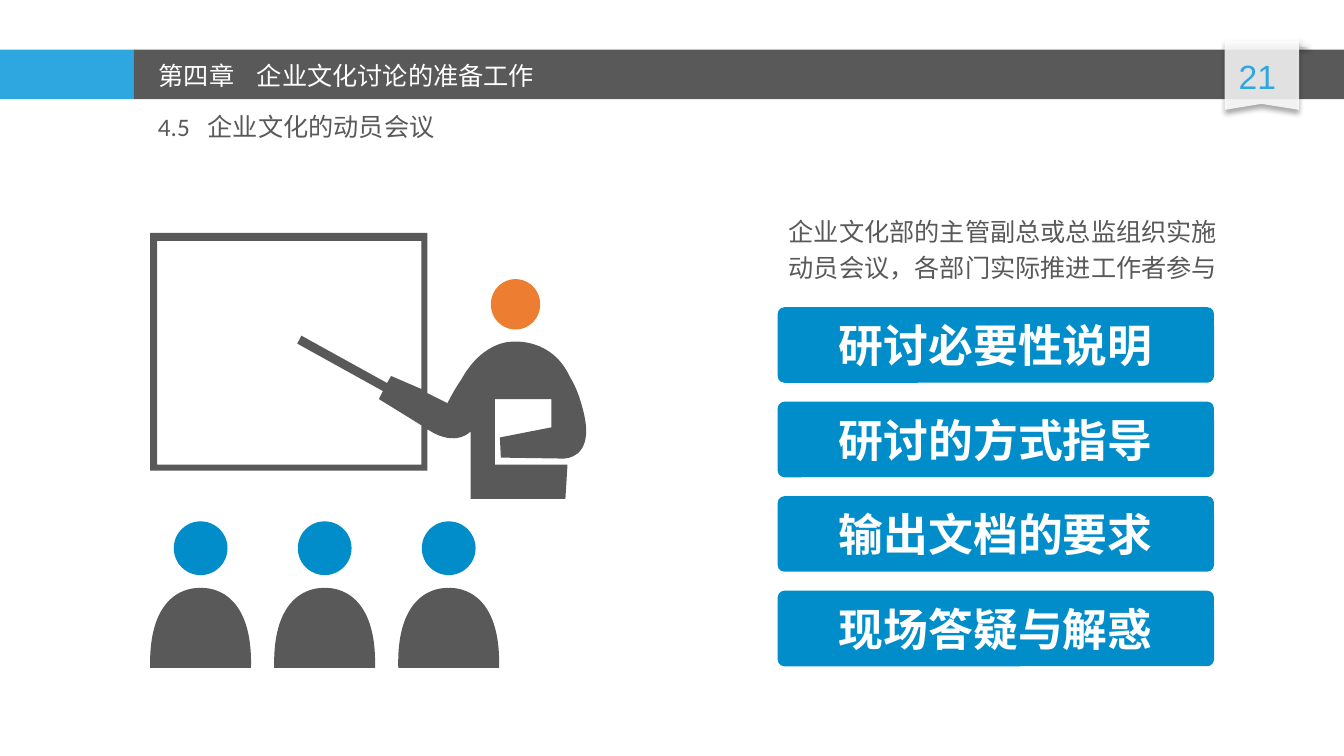
from typing import NamedTuple

from lxml.etree import SubElement
from pptx import Presentation
from pptx.dml.color import RGBColor
from pptx.enum.shapes import MSO_SHAPE
from pptx.enum.text import MSO_ANCHOR, PP_ALIGN
from pptx.oxml.ns import qn
from pptx.util import Pt

COLORS = {"sky": "2EA7E0", "blue": "008DCA", "gray": "595959", "pale": "F8F8F8",
          "white": "FFFFFF", "orange": "ED7D31", "black": "000000"}
CJK = "Noto Sans CJK SC"


class Box(NamedTuple):
    x: float
    y: float
    w: float
    h: float


class Plain(NamedTuple):
    kind: MSO_SHAPE
    box: Box
    color: str


Path = list[tuple[float, ...]]  # pairs are corners, sixes are Bezier curves

prs = Presentation()
prs.slide_width, prs.slide_height = Pt(960), Pt(540)
shapes = prs.slides.add_slide(prs.slide_layouts[6]).shapes


def paint(shape, color: str):
    shape.shadow.inherit = False
    shape.fill.solid()
    shape.fill.fore_color.rgb = RGBColor.from_string(COLORS[color])
    shape.line.fill.background()
    return shape


def draw(item: Plain):
    return paint(shapes.add_shape(item.kind, *map(Pt, item.box)), item.color)


def bend(form, parts: Path) -> None:
    """Turn the straight segments into curves where a part has six numbers."""
    steps = [step for step in form._element.iter(qn("a:moveTo"), qn("a:lnTo"))]
    for step, part in zip(steps, parts):
        if len(part) == 6:
            step.tag = qn("a:cubicBezTo")
            step.remove(step[0])
            for x, y in zip(part[::2], part[1::2]):
                SubElement(step, qn("a:pt"), x=str(Pt(x) - form.left),
                           y=str(Pt(y) - form.top))


def outline(color: str, *paths: Path):
    build = None
    for path in paths:
        start, *ends = [(Pt(part[-2]), Pt(part[-1])) for part in path]
        if build is None:
            build = shapes.build_freeform(*start, scale=1.0)
        else:
            build.move_to(*start)
        build.add_line_segments(ends, close=False)
    form = build.convert_to_shape()
    bend(form, [part for path in paths for part in path])
    return paint(form, color)


def glass(shape) -> None:
    """Make the fill 85% opaque and cast a soft shadow."""
    props = shape._element.spPr
    tint = props.find(qn("a:solidFill"))[0]
    SubElement(tint, qn("a:alpha"), val="85000")
    cast = SubElement(props.find(qn("a:effectLst")), qn("a:outerShdw"),
                      blurRad=str(Pt(4)), dist=str(Pt(3)), dir="5400000")
    tone = SubElement(cast, qn("a:srgbClr"), val=COLORS["black"])
    SubElement(tone, qn("a:alpha"), val="40000")


def write(shape, text: str, *, size: float = 18, font: str = CJK, color: str = "gray",
          bold: bool = False, align: PP_ALIGN = PP_ALIGN.LEFT,
          anchor: MSO_ANCHOR = MSO_ANCHOR.TOP, lead: float = 0,
          tab: float = 0, side: float = 7.2) -> None:
    frame = shape.text_frame
    frame.word_wrap = True
    frame.vertical_anchor = anchor
    frame.margin_left = frame.margin_right = Pt(side)
    para = frame.paragraphs[0]
    para.alignment = align
    if tab:
        stops = SubElement(para._p.get_or_add_pPr(), qn("a:tabLst"))
        SubElement(stops, qn("a:tab"), pos=str(Pt(tab)), algn="l")
    if lead:
        para.line_spacing = Pt(lead)
    run = para.add_run()
    run.text = text
    run.font.name, run.font.size, run.font.bold = font, Pt(size), bold
    run.font.color.rgb = RGBColor.from_string(COLORS[color])
    SubElement(run._r.get_or_add_rPr(), qn("a:ea"), typeface=CJK)


def label(box: Box, text: str, **style) -> None:
    write(shapes.add_textbox(*map(Pt, box)), text, **style)


# Header bars and page ribbon
draw(Plain(MSO_SHAPE.RECTANGLE, Box(0, 35.4, 95.6, 35.4), "sky"))
draw(Plain(MSO_SHAPE.RECTANGLE, Box(95.6, 35.4, 864.4, 35.4), "gray"))
glass(draw(Plain(MSO_SHAPE.RIGHT_TRIANGLE, Box(928.1, 27.4, 8.6, 5.8), "pale")))
glass(outline("white", [(874.8, 28.8), (928, 28.8), (928, 78.5),
                        (901, 74.2), (874.8, 78.5), (874.8, 28.8)]))
label(Box(871.5, 36.6, 53.3, 36), "21", size=24, font="Arial", color="sky",
      align=PP_ALIGN.CENTER)

# Headings
label(Box(106.3, 39.6, 363, 28.8), "第四章\t企业文化讨论的准备工作", color="white",
      lead=21.6, tab=70.2)
label(Box(105.8, 76.3, 382, 28.8), "4.5\t企业文化的动员会议", font="Calibri",
      lead=21.6, tab=35.5)

# Audience
for i in range(3):
    mid = 143.3 + 88.6 * i
    outline("gray", [(mid + 36, 477), (mid + 37.6, 416, mid, 420, mid, 420),
                     (mid, 420, mid - 37.6, 416, mid - 36, 477), (mid + 36, 477)])
    draw(Plain(MSO_SHAPE.OVAL, Box(mid - 19.2, 372.4, 38.4, 38.4), "blue"))

# Speaker at the board
draw(Plain(MSO_SHAPE.OVAL, Box(350.6, 199.4, 35.3, 36), "orange"))
body: Path = [
    (357.1, 312.5), (357.8, 326.9), (403.2, 327.6),
    (411.1, 326.9, 423.4, 321.1, 416.9, 294.5),
    (414, 283, 411.8, 277.2, 406.8, 268.6),
    (393.8, 241.2, 366.5, 244.1, 366.5, 244.1),
    (366.5, 244.1, 345.6, 242.6, 329.8, 270.7),
    (325.4, 277.2, 322.6, 282.2, 319.7, 288),
    (305.3, 280.8), (305.3, 166.3), (107.3, 166.3), (107.3, 336.2),
    (305.3, 336.2), (305.3, 306.7), (310.3, 309.6),
    (327.6, 318.2, 336.2, 308.2, 336.2, 308.2),
    (336.2, 356.4), (403.9, 356.4), (405.4, 331.9), (353.5, 331.9),
    (353.5, 285.1), (393.8, 285.1), (393.8, 305.3), (357.1, 312.5)]
board: Path = [
    (301, 331.9), (112.3, 331.9), (112.3, 172.1), (301, 172.1), (301, 277.9),
    (279.4, 268.6), (276.5, 273.6), (215.3, 239.8), (212.4, 245.5),
    (273.6, 279.4), (270.7, 285.1), (301, 303.8), (301, 331.9)]
outline("gray", body, board)

# Summary and topics
label(Box(555.8, 147, 321.1, 59),
      "企业文化部的主管副总或总监组织实施动员会议，各部门实际推进工作者参与",
      align=PP_ALIGN.CENTER, lead=25.7, side=5)
topics = ["研讨必要性说明", "研讨的方式指导", "输出文档的要求", "现场答疑与解惑"]
for i, topic in enumerate(topics):
    card = draw(Plain(MSO_SHAPE.ROUNDED_RECTANGLE,
                      Box(555.5, 219.4 + 67.5 * i, 311.7, 54), "blue"))
    card.adjustments[0] = 0.09
    write(card, topic, size=32, font="Calibri", color="white", bold=True,
          align=PP_ALIGN.CENTER, anchor=MSO_ANCHOR.MIDDLE)

prs.save("out.pptx")
